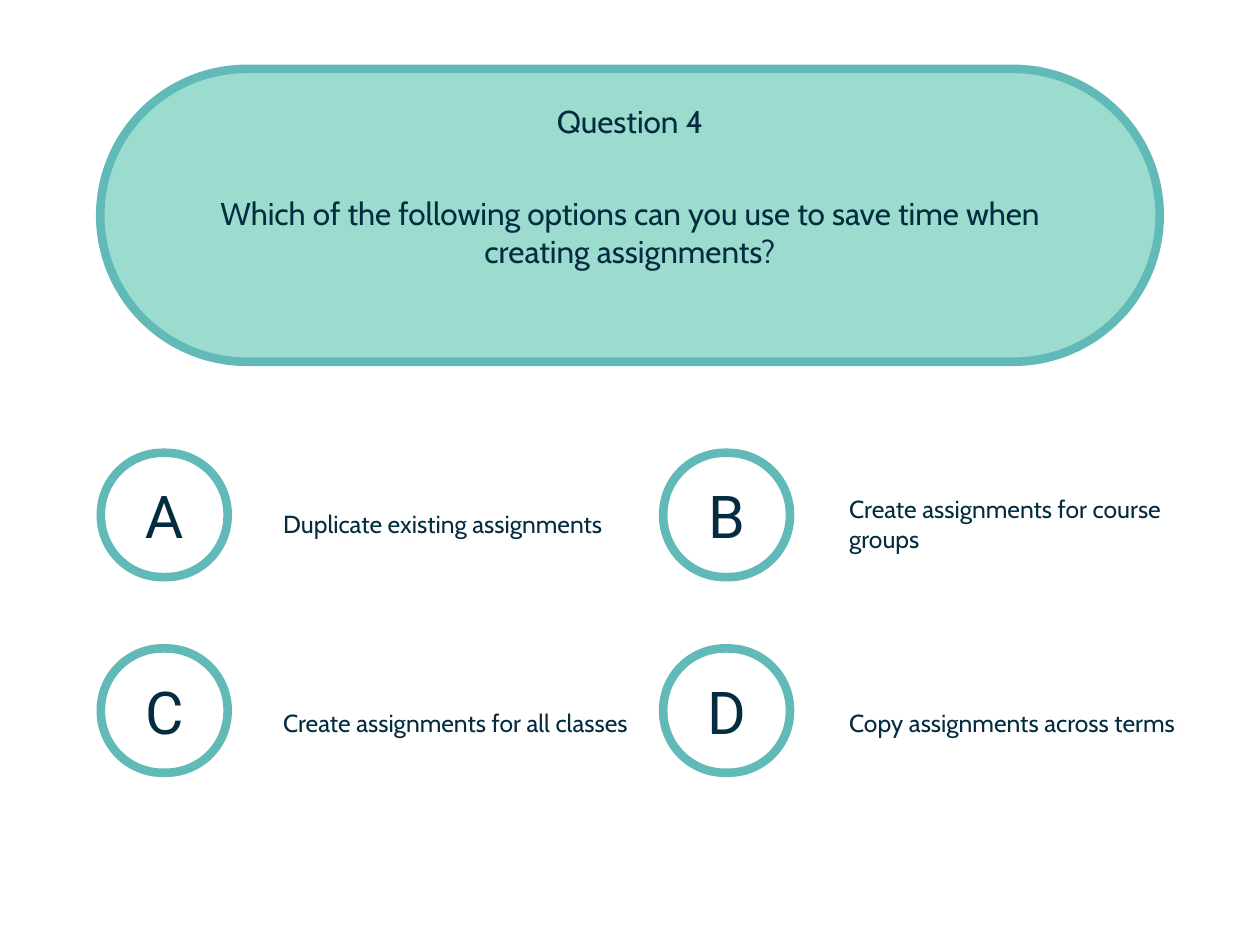
import pptx
import pptx.dml.color
import pptx.enum.shapes
import pptx.enum.text
import pptx.util

Pt = pptx.util.Pt
ALIGN = pptx.enum.text.PP_ALIGN

COLORS = {"ink": "042C40", "border": "62BAB8", "banner": "9BDCCF"}
TITLE_LAYOUT = 5

BADGE_LEFT, BADGE_TOP, BADGE_WIDTH, BADGE_HEIGHT = 82, 368, 103, 101
BADGE_COLUMN_STEP, BADGE_ROW_STEP = 457, 159
ANSWER_LEFT, ANSWER_TOP, ANSWER_WIDTH, ANSWER_HEIGHT = 223, 397.5, 294.5, 56
ANSWER_COLUMN_STEP, ANSWER_ROW_STEP = 460, 161.5

ANSWERS = [
    ("A", "Duplicate existing assignments"),
    ("B", "Create assignments for course groups"),
    ("C", "Create assignments for all classes"),
    ("D", "Copy assignments across terms"),
]


def rgb(name):
    return pptx.dml.color.RGBColor.from_string(COLORS[name])


def write_text(shape, text, size=20, font="Cabin", align=ALIGN.LEFT, margin=None):
    frame = shape.text_frame
    frame.word_wrap = True
    frame.auto_size = pptx.enum.text.MSO_AUTO_SIZE.NONE
    frame.vertical_anchor = pptx.enum.text.MSO_ANCHOR.MIDDLE
    if margin is not None:
        frame.margin_left = frame.margin_right = Pt(margin)
        frame.margin_top = frame.margin_bottom = Pt(margin)
    paragraph = frame.paragraphs[0]
    paragraph.alignment = align
    paragraph.space_before = Pt(0)
    paragraph.space_after = Pt(8.5)
    run = paragraph.add_run()
    run.text = text
    run.font.size = Pt(size)
    run.font.name = font
    run.font.color.rgb = rgb("ink")


def add_pill(slide, left, top, width, height, roundness=0.5, fill=None):
    shape = slide.shapes.add_shape(
        pptx.enum.shapes.MSO_SHAPE.ROUNDED_RECTANGLE,
        Pt(left), Pt(top), Pt(width), Pt(height))
    shape.adjustments[0] = roundness
    shape.shadow.inherit = False
    if fill:
        shape.fill.solid()
        shape.fill.fore_color.rgb = rgb(fill)
    else:
        shape.fill.background()
    shape.line.color.rgb = rgb("border")
    shape.line.width = Pt(7)
    return shape


def add_text(slide, left, top, width, height, text, **text_format):
    box = slide.shapes.add_textbox(Pt(left), Pt(top), Pt(width), Pt(height))
    write_text(box, text, **text_format)


def set_title(slide, left, top, width, height, text, **text_format):
    title = slide.shapes.title
    title.left, title.top = Pt(left), Pt(top)
    title.width, title.height = Pt(width), Pt(height)
    write_text(title, text, **text_format)
    return title


def add_answer(slide, row, column, letter, answer):
    badge = add_pill(slide, BADGE_LEFT + column * BADGE_COLUMN_STEP,
                     BADGE_TOP + row * BADGE_ROW_STEP,
                     BADGE_WIDTH, BADGE_HEIGHT, roundness=0.495)
    write_text(badge, letter, size=48, font="Roboto", align=ALIGN.CENTER, margin=3)
    add_text(slide, ANSWER_LEFT + column * ANSWER_COLUMN_STEP,
             ANSWER_TOP + row * ANSWER_ROW_STEP,
             ANSWER_WIDTH, ANSWER_HEIGHT, answer)


def main():
    presentation = pptx.Presentation()
    presentation.slide_width, presentation.slide_height = Pt(1024), Pt(768)
    slide = presentation.slides.add_slide(presentation.slide_layouts[TITLE_LAYOUT])

    # Question banner, placed behind the title
    banner = add_pill(slide, 81.5, 56, 861, 238, fill="banner")
    title = set_title(slide, 77, 77, 870, 42, "Question 4",
                      size=25.6, align=ALIGN.CENTER)
    title.element.addprevious(banner.element)
    add_text(slide, 145, 150.5, 734, 76,
             "Which of the following options can you use to save time when "
             "creating assignments?", size=25.6, align=ALIGN.CENTER)

    # Answers in two rows of two
    for index, (letter, answer) in enumerate(ANSWERS):
        row, column = divmod(index, 2)
        add_answer(slide, row, column, letter, answer)

    presentation.save("out.pptx")


if __name__ == "__main__":
    main()
